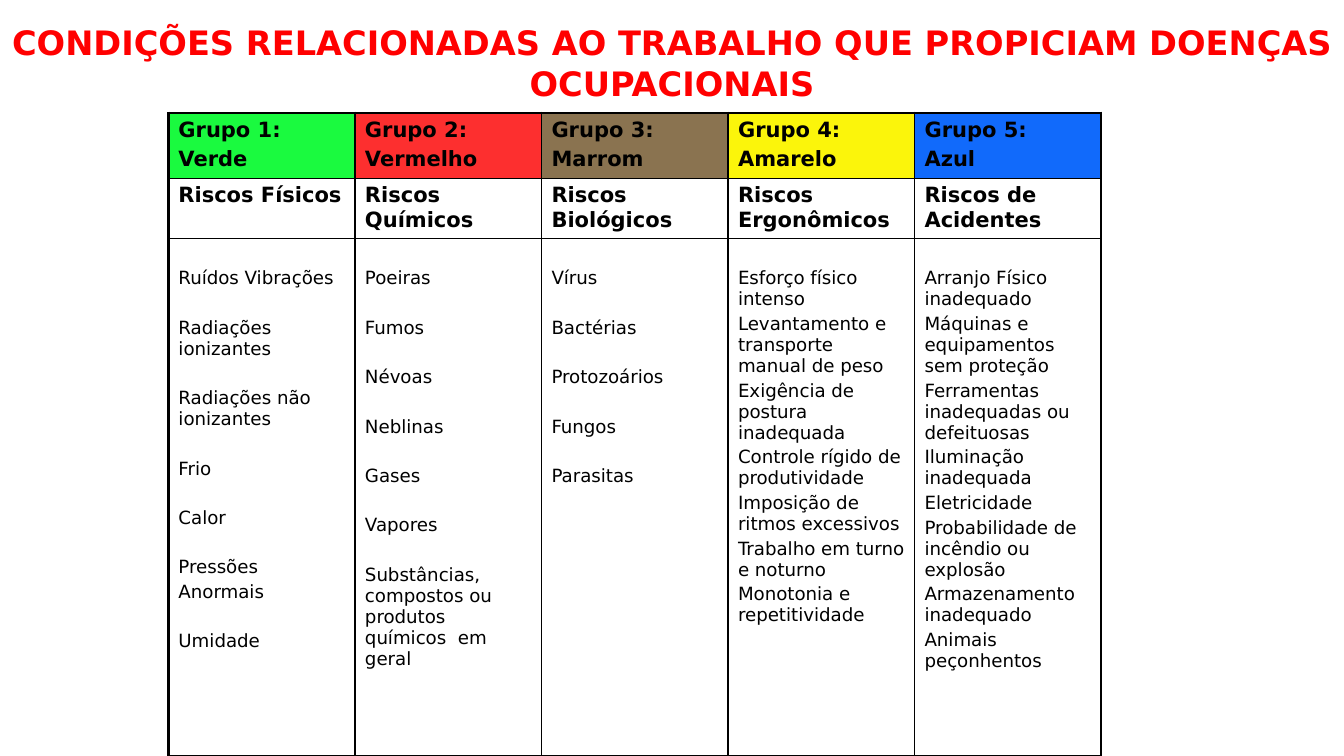
import pptx
import pptx.util
import pptx.dml.color
import pptx.enum.text
import pptx.oxml
import pptx.oxml.ns

Inches, Pt = pptx.util.Inches, pptx.util.Pt
FONT = "DejaVu Sans"
COLORS = {
    "title": "FF0000", "text": "000000", "border": "000000",
    "verde": "1AFA3F", "vermelho": "FD2F2F", "marrom": "8A7350",
    "amarelo": "FBF50B", "azul": "116AFB",
}
TITLE = "CONDIÇÕES RELACIONADAS AO TRABALHO QUE PROPICIAM DOENÇAS OCUPACIONAIS"
THIN, THICK = 1, 2.25
ROW_HEIGHTS = [0.65, 0.6, 5.13]
COL_WIDTH = 1.85
GROUP_GAP = 20.3

# Color name, risk heading, and examples in blocks set apart by a wider gap
GROUPS = [
    ("Verde", "Riscos Físicos", [
        ["Ruídos Vibrações"], ["Radiações ionizantes"],
        ["Radiações não ionizantes"], ["Frio"], ["Calor"],
        ["Pressões", "Anormais"], ["Umidade"]]),
    ("Vermelho", "Riscos Químicos", [
        ["Poeiras"], ["Fumos"], ["Névoas"], ["Neblinas"], ["Gases"],
        ["Vapores"],
        ["Substâncias, compostos ou produtos químicos  em geral"]]),
    ("Marrom", "Riscos Biológicos", [
        ["Vírus"], ["Bactérias"], ["Protozoários"], ["Fungos"],
        ["Parasitas"]]),
    ("Amarelo", "Riscos Ergonômicos", [[
        "Esforço físico intenso",
        "Levantamento e transporte manual de peso",
        "Exigência de postura inadequada",
        "Controle rígido de produtividade",
        "Imposição de ritmos excessivos",
        "Trabalho em turno e noturno",
        "Monotonia e repetitividade"]]),
    ("Azul", "Riscos de Acidentes", [[
        "Arranjo Físico inadequado",
        "Máquinas e equipamentos sem proteção",
        "Ferramentas inadequadas ou defeituosas",
        "Iluminação inadequada",
        "Eletricidade",
        "Probabilidade de incêndio ou explosão",
        "Armazenamento inadequado",
        "Animais peçonhentos"]]),
]


def rgb(name):
    return pptx.dml.color.RGBColor.from_string(COLORS[name])


def style(p, size, color, bold):
    p.font.name = FONT
    p.font.size = Pt(size)
    p.font.bold = bold
    p.font.color.rgb = rgb(color)


def add_title(slide):
    sp = slide.shapes.add_textbox(0, Inches(0.17), Inches(13.33), Inches(1.21))
    tf = sp.text_frame
    tf.word_wrap = True
    p = tf.paragraphs[0]
    p.text = TITLE
    p.alignment = pptx.enum.text.PP_ALIGN.CENTER
    style(p, 24, "title", True)


def write_cell(cell, blocks, size, bold):
    tf = cell.text_frame
    first = True
    for block in blocks:
        for i, text in enumerate(block):
            p = tf.paragraphs[0] if first else tf.add_paragraph()
            p.text = text
            gap = GROUP_GAP if i == 0 else 0.2 * size
            p.space_before = Pt(0 if first else gap)
            style(p, size, "text", bold)
            first = False


def set_borders(cell, widths):
    """Draw the left, right, top and bottom edges, in that order."""
    tc_pr = cell._tc.get_or_add_tcPr()
    for i, (side, width) in enumerate(zip("LRTB", widths)):
        line = pptx.oxml.parse_xml(
            f'<a:ln{side} {pptx.oxml.ns.nsdecls("a")} w="{int(Pt(width))}">'
            f'<a:solidFill><a:srgbClr val="{COLORS["border"]}"/></a:solidFill>'
            f'</a:ln{side}>')
        tc_pr.insert(i, line)


def add_risk_table(slide):
    rows, cols = len(ROW_HEIGHTS), len(GROUPS)
    table = slide.shapes.add_table(
        rows, cols, Inches(1.67), Inches(1.12),
        Inches(COL_WIDTH * cols), Inches(sum(ROW_HEIGHTS))).table
    table.first_row = table.horz_banding = False
    for row, height in zip(table.rows, ROW_HEIGHTS):
        row.height = Inches(height)
    for c, (color, risk, examples) in enumerate(GROUPS):
        table.columns[c].width = Inches(COL_WIDTH)
        contents = [
            ([[f"Grupo {c + 1}:", color]], 15, True),
            ([[risk]], 15, True),
            (examples, 13, False),
        ]
        for r, content in enumerate(contents):
            cell = table.cell(r, c)
            write_cell(cell, *content)
            cell.fill.background()
            outer = (c == 0, c == cols - 1, r == 0, r == rows - 1)
            set_borders(cell, [THICK if edge else THIN for edge in outer])
        # Colored heading, and room above the examples
        head = table.cell(0, c)
        head.fill.solid()
        head.fill.fore_color.rgb = rgb(color.lower())
        table.cell(rows - 1, c).margin_top = Inches(0.29)


def main():
    prs = pptx.Presentation()
    prs.slide_width, prs.slide_height = Inches(13.33), Inches(7.5)
    slide = prs.slides.add_slide(prs.slide_layouts[6])
    add_risk_table(slide)
    add_title(slide)
    prs.save("out.pptx")


if __name__ == "__main__":
    main()
